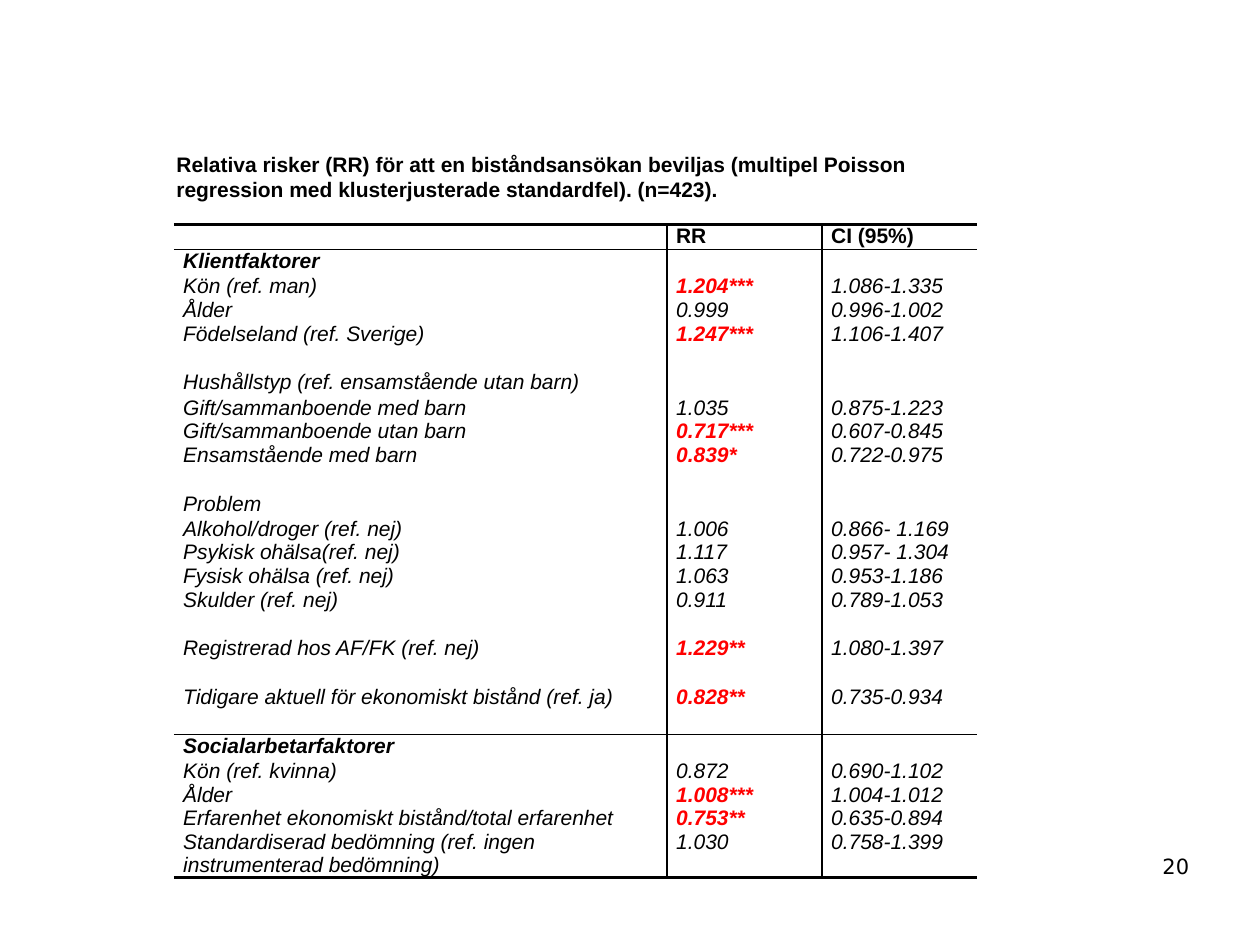
from lxml.etree import SubElement
from pptx import Presentation
from pptx.dml.color import RGBColor
from pptx.enum.text import MSO_ANCHOR, PP_ALIGN
from pptx.oxml.ns import qn
from pptx.util import Pt

BLACK = RGBColor(0x00, 0x00, 0x00)
RED = RGBColor(0xFF, 0x00, 0x00)

TITLE = ("Relativa risker (RR) för att en biståndsansökan beviljas (multipel Poisson "
         "regression med klusterjusterade standardfel). (n=423).")
BLANK = ("", "", "")
ROWS = [
    ("", "RR", "CI (95%)"),
    ("Klientfaktorer", "", ""),
    ("Kön (ref. man)", "1.204***", "1.086-1.335"),
    ("Ålder", "0.999", "0.996-1.002"),
    ("Födelseland (ref. Sverige)", "1.247***", "1.106-1.407"),
    BLANK,
    ("Hushållstyp (ref. ensamstående utan barn)", "", ""),
    ("Gift/sammanboende med barn", "1.035", "0.875-1.223"),
    ("Gift/sammanboende utan barn", "0.717***", "0.607-0.845"),
    ("Ensamstående med barn", "0.839*", "0.722-0.975"),
    BLANK,
    ("Problem", "", ""),
    ("Alkohol/droger (ref. nej)", "1.006", "0.866- 1.169"),
    ("Psykisk ohälsa(ref. nej)", "1.117", "0.957- 1.304"),
    ("Fysisk ohälsa (ref. nej)", "1.063", "0.953-1.186"),
    ("Skulder (ref. nej)", "0.911", "0.789-1.053"),
    BLANK,
    ("Registrerad hos AF/FK (ref. nej)", "1.229**", "1.080-1.397"),
    BLANK,
    ("Tidigare aktuell för ekonomiskt bistånd (ref. ja)", "0.828**", "0.735-0.934"),
    BLANK,
    ("Socialarbetarfaktorer", "", ""),
    ("Kön (ref. kvinna)", "0.872", "0.690-1.102"),
    ("Ålder", "1.008***", "1.004-1.012"),
    ("Erfarenhet ekonomiskt bistånd/total erfarenhet", "0.753**", "0.635-0.894"),
    ("Standardiserad bedömning (ref. ingen instrumenterad bedömning)",
     "1.030", "0.758-1.399"),
]
SECTIONS = ("Klientfaktorer", "Socialarbetarfaktorer")
COLUMN_WIDTHS = (281.7, 88.6, 88.6)
LINE_HEIGHT = 13.45
TEXT_SIZE = 12


def format_text(para, font_name, color=BLACK, bold=False, italic=False):
    for span in para.runs:
        font = span.font
        font.name, font.size = font_name, Pt(TEXT_SIZE)
        font.bold, font.italic = bold, italic
        font.color.rgb = color


def set_borders(cell, widths):
    """Draw the left, right, top and bottom borders; a width of 0 hides one."""
    properties = cell._tc.get_or_add_tcPr()
    for side, width in zip(("lnL", "lnR", "lnT", "lnB"), widths):
        line = SubElement(properties, qn(f"a:{side}"), w=str(Pt(width)))
        if width:
            fill = SubElement(line, qn("a:solidFill"))
            SubElement(fill, qn("a:srgbClr"), val=str(BLACK))
        else:
            SubElement(line, qn("a:noFill"))


def rule_above(row):
    """Width of the horizontal rule above a row, or below the last one."""
    if row in (0, len(ROWS)):
        return 1.5
    return 1 if row == 1 or ROWS[row][0] in SECTIONS else 0


def fill_cell(cell, text, row, column):
    cell.margin_left = cell.margin_right = Pt(5.3)
    cell.margin_top = cell.margin_bottom = 0
    cell.text_frame.text = text
    para = cell.text_frame.paragraphs[0]
    para.line_spacing = Pt(LINE_HEIGHT)
    if not text:
        # An empty cell takes its line height from the end-of-paragraph size.
        SubElement(para._p, qn("a:endParaRPr"), sz=str(TEXT_SIZE * 100))
    significant = "*" in text
    format_text(para, "Arial", RED if significant else BLACK,
                bold=significant or row == 0 or text in SECTIONS, italic=row > 0)
    last_column = len(COLUMN_WIDTHS) - 1
    set_borders(cell, (int(column > 0), int(column < last_column),
                       rule_above(row), rule_above(row + 1)))
    cell.fill.background()


def place(shape, left, top, width, height):
    shape.left, shape.top = Pt(left), Pt(top)
    shape.width, shape.height = Pt(width), Pt(height)


def add_title(page, box):
    title = page.shapes.title
    place(title, *box)
    frame = title.text_frame
    frame.text = TITLE
    frame.word_wrap = True
    frame.vertical_anchor = MSO_ANCHOR.MIDDLE
    para = frame.paragraphs[0]
    para.alignment = PP_ALIGN.LEFT
    format_text(para, "Arial", bold=True)


def add_risk_table(page, left, top):
    table = page.shapes.add_table(
        len(ROWS), len(COLUMN_WIDTHS), Pt(left), Pt(top),
        Pt(sum(COLUMN_WIDTHS)), Pt(LINE_HEIGHT * (len(ROWS) + 1))).table
    table.first_row = table.horz_banding = False
    for column, width in zip(table.columns, COLUMN_WIDTHS):
        column.width = Pt(width)
    for row, texts in enumerate(ROWS):
        lines = 2 if row == len(ROWS) - 1 else 1
        table.rows[row].height = Pt(LINE_HEIGHT * lines)
        for column, text in enumerate(texts):
            fill_cell(table.cell(row, column), text, row, column)


def add_page_number(page, box):
    number = page.shapes.add_textbox(*map(Pt, box))
    frame = number.text_frame
    frame.word_wrap = True
    frame.text = "20"
    para = frame.paragraphs[0]
    para.alignment = PP_ALIGN.RIGHT
    format_text(para, "DejaVu Sans")


def main():
    deck = Presentation()
    deck.slide_width, deck.slide_height = Pt(720), Pt(540)
    page = deck.slides.add_slide(deck.slide_layouts[5])
    add_page_number(page, (518.4, 484.2, 168.2, 24))
    add_risk_table(page, 99.4, 128.2)
    add_title(page, (93.6, 82.8, 460.8, 36))
    deck.save("out.pptx")


if __name__ == "__main__":
    main()
